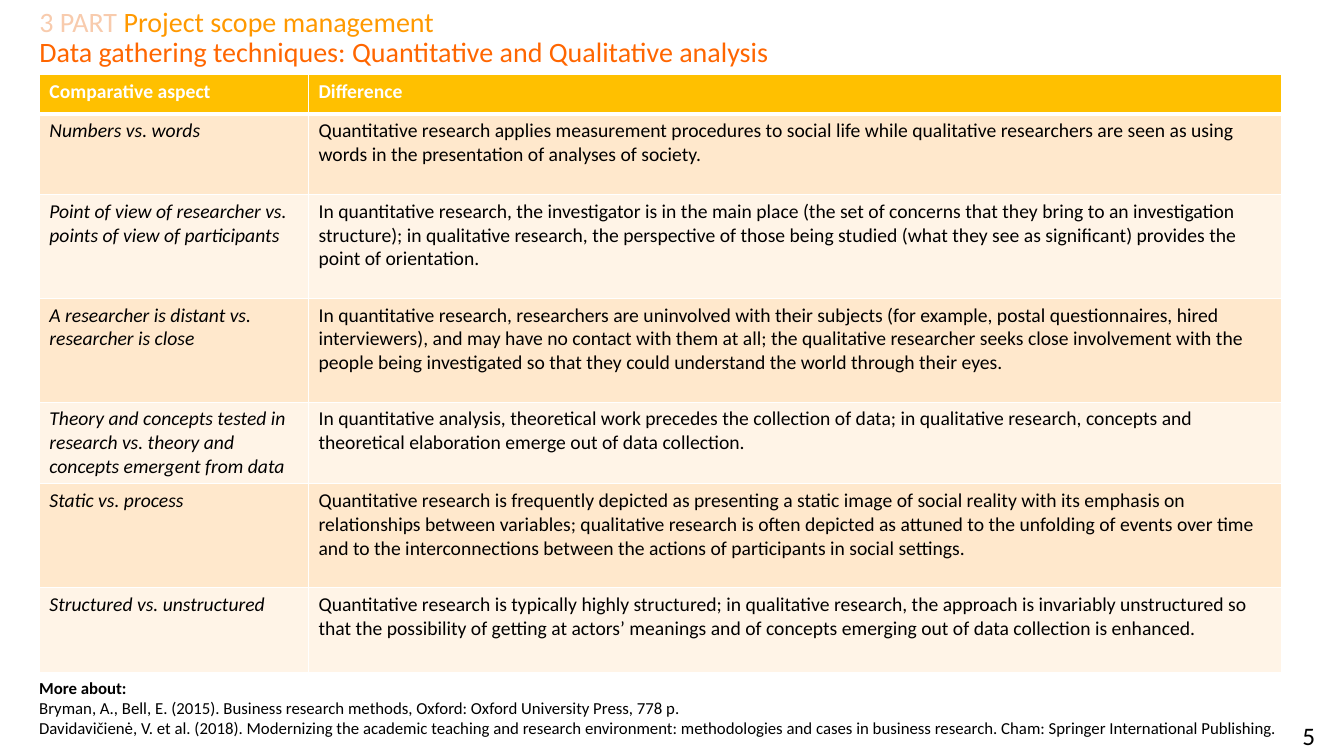
import pptx
import pptx.dml.color
import pptx.enum.text
import pptx.oxml.ns
import pptx.util
from lxml import etree

COLOURS = {
    "part": "F8CBAD",
    "scope": "FF9900",
    "topic": "FF6600",
    "header": "FFC000",
    "dark_band": "FFE8CC",
    "light_band": "FFF4E7",
    "text": "000000",
    "white": "FFFFFF",
}

COLUMN_WIDTHS = [267, 965]
ROW_HEIGHTS = [39, 80, 103, 103, 81, 103, 84]
COMPARISON = [
    ("Comparative aspect", "Difference"),
    ("Numbers vs. words",
     "Quantitative research applies measurement procedures to social life while qualitative "
     "researchers are seen as using words in the presentation of analyses of society."),
    ("Point of view of researcher vs. points of view of participants",
     "In quantitative research, the investigator is in the main place (the set of concerns that "
     "they bring to an investigation structure); in qualitative research, the perspective of those "
     "being studied (what they see as significant) provides the point of orientation."),
    ("A researcher is distant vs. researcher is close",
     "In quantitative research, researchers are uninvolved with their subjects (for example, postal "
     "questionnaires, hired interviewers), and may have no contact with them at all; the qualitative "
     "researcher seeks close involvement with the people being investigated so that they could "
     "understand the world through their eyes."),
    ("Theory and concepts tested in research vs. theory and concepts emergent from data",
     "In quantitative analysis, theoretical work precedes the collection of data; in qualitative "
     "research, concepts and theoretical elaboration emerge out of data collection."),
    ("Static vs. process",
     "Quantitative research is frequently depicted as presenting a static image of social reality "
     "with its emphasis on relationships between variables; qualitative research is often depicted "
     "as attuned to the unfolding of events over time and to the interconnections between the "
     "actions of participants in social settings."),
    ("Structured vs. unstructured",
     "Quantitative research is typically highly structured; in qualitative research, the approach "
     "is invariably unstructured so that the possibility of getting at actors’ meanings and of "
     "concepts emerging out of data collection is enhanced."),
]
SOURCES = [
    "Bryman, A., Bell, E. (2015). Business research methods, Oxford: Oxford University Press, 778 p.",
    "Davidavičienė, V. et al. (2018). Modernizing the academic teaching and research environment: "
    "methodologies and cases in business research. Cham: Springer International Publishing.",
]


def px(length):
    return pptx.util.Emu(length * 9144)


def rgb(name):
    return pptx.dml.color.RGBColor.from_string(COLOURS[name])


class SlideBuilder:
    font_name = "Calibri"

    def __init__(self, page):
        self.page = page

    def place(self, shape, left, top, width, height):
        for name, value in dict(left=left, top=top, width=width, height=height).items():
            setattr(shape, name, px(value))

    def span(self, para, text, size, colour="text", **format_values):
        span = para.add_run()
        span.text = text
        values = dict(name=self.font_name, size=pptx.util.Pt(size), **format_values)
        for name, value in values.items():
            setattr(span.font, name, value)
        span.font.color.rgb = rgb(colour)

    def title(self, bounds, lines, size):
        title = self.page.shapes.title
        self.place(title, *bounds)
        frame = title.text_frame
        frame.word_wrap = True
        frame.auto_size = pptx.enum.text.MSO_AUTO_SIZE.NONE
        frame.vertical_anchor = pptx.enum.text.MSO_ANCHOR.MIDDLE
        para = frame.paragraphs[0]
        para.alignment = pptx.enum.text.PP_ALIGN.LEFT
        para.line_spacing = 0.9
        for number, line in enumerate(lines):
            if number:
                para.add_line_break()
            for text, colour in line:
                self.span(para, text, size, colour)

    def text(self, bounds, lines, size, bold_first=False):
        box = self.page.shapes.add_textbox(*map(px, bounds))
        frame = box.text_frame
        frame.word_wrap = True
        for number, line in enumerate(lines):
            para = frame.add_paragraph() if number else frame.paragraphs[0]
            self.span(para, line, size, bold=bold_first and number == 0)

    def borders(self, cell, widths):
        properties = cell._tc.get_or_add_tcPr()
        for side, width in widths.items():
            line = etree.SubElement(properties, pptx.oxml.ns.qn(f"a:ln{side}"),
                                    w=str(pptx.util.Pt(width)))
            fill = etree.SubElement(line, pptx.oxml.ns.qn("a:solidFill"))
            etree.SubElement(fill, pptx.oxml.ns.qn("a:srgbClr"), val=COLOURS["white"])

    def table(self, left, top, column_widths, row_heights, rows, size):
        bounds = left, top, sum(column_widths), sum(row_heights)
        table = self.page.shapes.add_table(
            len(rows), len(column_widths), *map(px, bounds)).table
        for column, width in zip(table.columns, column_widths):
            column.width = px(width)
        for row_number, (height, texts) in enumerate(zip(row_heights, rows)):
            table.rows[row_number].height = px(height)
            header = row_number == 0
            band = "header" if header else ("light_band", "dark_band")[row_number % 2]
            for column_number, text in enumerate(texts):
                cell = table.cell(row_number, column_number)
                self.borders(cell, {"L": 1, "R": 1, "T": 3 if row_number == 1 else 1,
                                    "B": 3 if header else 1})
                cell.fill.solid()
                cell.fill.fore_color.rgb = rgb(band)
                self.span(cell.text_frame.paragraphs[0], text, size,
                          "white" if header else "text", bold=header,
                          italic=not header and column_number == 0)


def main():
    deck = pptx.Presentation()
    deck.slide_width, deck.slide_height = px(1333), px(750)
    slide = SlideBuilder(deck.slides.add_slide(deck.slide_layouts[5]))
    slide.title((29, 29, 1276, 18), [
        [("3 PART ", "part"), ("Project scope management", "scope")],
        [("Data gathering techniques: Quantitative and Qualitative analysis", "topic")],
    ], 20)
    slide.text((1282, 710, 46, 40), ["5"], 18)
    slide.text((29, 667, 1253, 71), ["More about:", *SOURCES], 12, bold_first=True)
    slide.table(39, 74, COLUMN_WIDTHS, ROW_HEIGHTS, COMPARISON, 14)
    deck.save("out.pptx")


if __name__ == "__main__":
    main()
